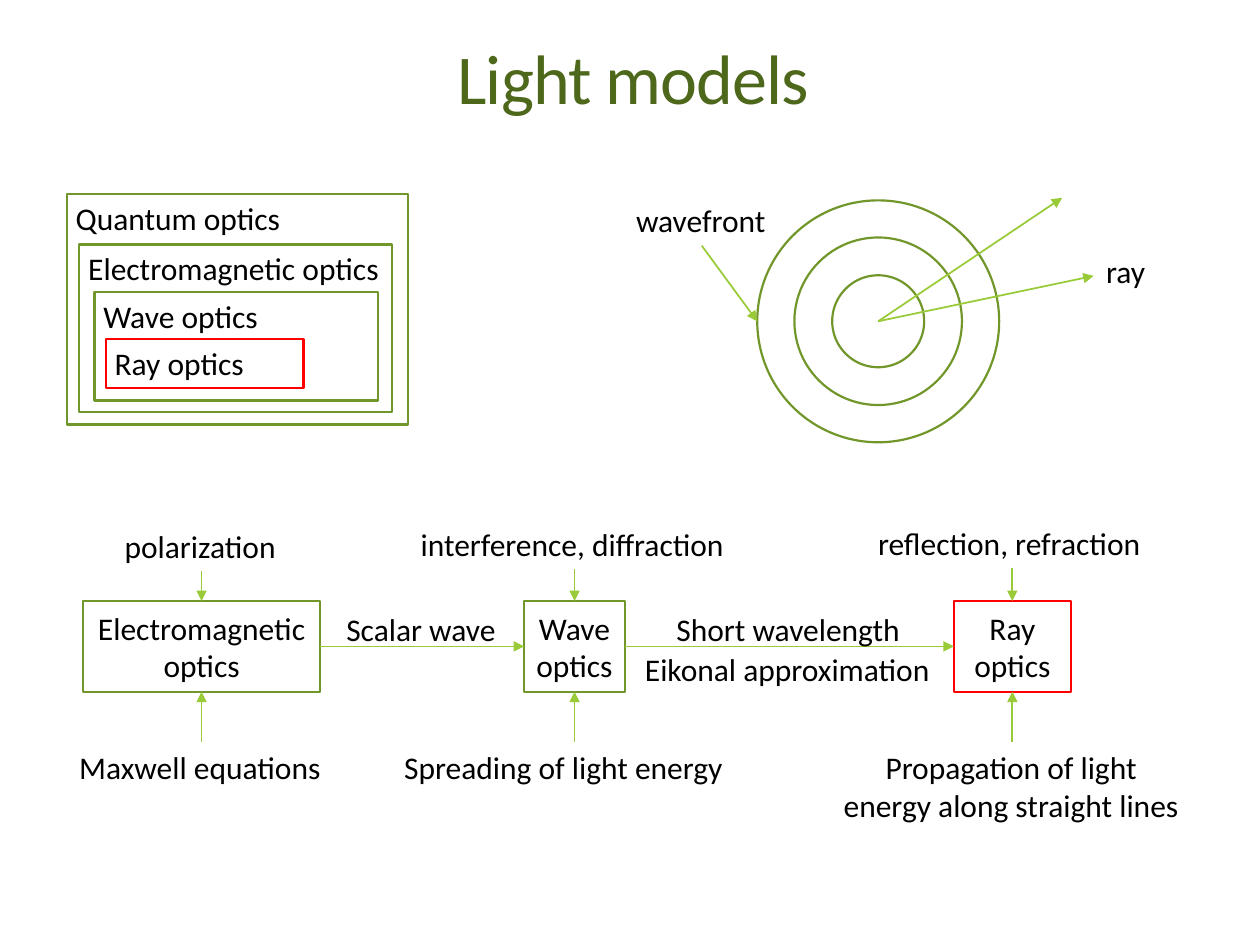
from lxml import etree
from pptx import Presentation
from pptx.dml.color import RGBColor
from pptx.enum import shapes, text
from pptx.oxml import ns
from pptx.util import Inches, Pt

DARK = RGBColor(0x4D, 0x67, 0x1B)
GREEN = RGBColor(0x71, 0x96, 0x29)
LIME = RGBColor(0x99, 0xCB, 0x38)
RED = RGBColor(0xFF, 0, 0)
BLACK = RGBColor(0, 0, 0)
KIND = shapes.MSO_SHAPE
LEFT, MID = text.PP_ALIGN.LEFT, text.PP_ALIGN.CENTER
TOP, CORE, LOW = (text.MSO_ANCHOR.TOP, text.MSO_ANCHOR.MIDDLE,
                  text.MSO_ANCHOR.BOTTOM)


def assign(item, values):
    for key, value in values.items():
        setattr(item, key, value)


def write(shape, words, align=LEFT, anchor=TOP, wrap=True, pad=(0.1, 0.05),
          size=18, color=BLACK):
    frame = shape.text_frame
    side, edge = map(Inches, pad)
    assign(frame, dict(word_wrap=wrap, vertical_anchor=anchor,
                       margin_left=side, margin_right=side,
                       margin_top=edge, margin_bottom=edge))
    line = frame.paragraphs[0]
    line.alignment = align
    run = line.add_run()
    run.text = words
    assign(run.font, dict(name="Calibri", size=Pt(size)))
    run.font.color.rgb = color
    return line


def label(slide, words, x, y, w, h=0.4, **style):
    box = slide.shapes.add_textbox(*map(Inches, (x, y, w, h)))
    return write(box, words, **style)


def outline(slide, kind, x, y, w, h, color=GREEN):
    shape = slide.shapes.add_shape(kind, *map(Inches, (x, y, w, h)))
    shape.shadow.inherit = False
    shape.fill.background()
    shape.line.color.rgb = color
    shape.line.width = Pt(1.25)
    return shape


def arrow(slide, *ends):
    link = slide.shapes.add_connector(shapes.MSO_CONNECTOR.STRAIGHT,
                                      *map(Inches, ends))
    link.line.color.rgb = LIME
    link.line.width = Pt(1)
    tip = etree.SubElement(link.line._get_or_add_ln(), ns.qn("a:tailEnd"))
    tip.set("type", "triangle")
    etree.SubElement(link._element.spPr, ns.qn("a:effectLst"))


def title(slide, x, y, w, h):
    line = label(slide, "Light models", x, y, w, h, align=MID, anchor=LOW,
                 size=40, color=DARK)
    line.line_spacing = 0.85
    line.runs[0]._r.get_or_add_rPr().set("spc", "-50")


def nest(slide, x, y, w, h):
    layers = [
        ("Quantum optics", 0, 0, w, h, GREEN),
        ("Electromagnetic optics", 0.1, 0.4, 2.48, 1.33, GREEN),
        ("Wave optics", 0.22, 0.78, 2.25, 0.86, GREEN),
        ("Ray optics", 0.31, 1.15, 1.57, 0.39, RED),
    ]
    for words, dx, dy, wide, high, color in layers:
        box = outline(slide, KIND.RECTANGLE, x + dx, y + dy, wide, high, color)
        write(box, words, pad=(0.07, 0.04))


def waves(slide, x, y, w, h):
    cx, cy = x + 2.02, y + 1
    for size in (0.73, 1.33, 1.92):
        outline(slide, KIND.OVAL, cx - size / 2, cy - size / 2, size, size)
    arrow(slide, cx, cy, x + 3.48, y + 0.02)
    arrow(slide, cx, cy, x + 3.73, y + 0.64)
    arrow(slide, x + 0.62, y + 0.4, cx - 0.96, cy)
    label(slide, "wavefront", x, y, 1.24, wrap=False)
    label(slide, "ray", x + w - 0.51, y + 0.4, 0.51, wrap=False)


def flow(slide, x, y, w, h):
    top, high = y + 0.66, 0.72
    base, foot = top + high, y + 1.78
    axis = top + high / 2
    stages = [
        ("Electromagnetic optics", 0.13, 1.88, GREEN,
         ("polarization", 0.36, 0.02, 1.42),
         ("Maxwell equations", 0, 2.14, 0.4, False, LEFT)),
        ("Wave optics", 3.63, 0.8, GREEN,
         ("interference, diffraction", 2.71, 0.01, 2.65),
         ("Spreading of light energy", 2.58, 2.9, 0.4, True, LEFT)),
        ("Ray optics", 7.04, 0.93, RED,
         ("reflection, refraction", 6.34, 0, 2.31),
         ("Propagation of light energy along straight lines",
          6.05, 2.89, 0.71, True, MID)),
    ]
    for words, dx, wide, color, effect, cause in stages:
        box = outline(slide, KIND.RECTANGLE, x + dx, top, wide, high, color)
        write(box, words, MID, CORE, pad=(0.07, 0.04))
        name, ex, ey, ew = effect
        label(slide, name, x + ex, y + ey, ew, wrap=False)
        name, bx, bw, bh, wrap, align = cause
        label(slide, name, x + bx, foot, bw, bh, wrap=wrap, align=align)
        mid = x + dx + wide / 2
        arrow(slide, mid, y + ey + 0.4, mid, top)
        arrow(slide, mid, foot, mid, base)
    for one, two in zip(stages, stages[1:]):
        arrow(slide, x + one[1] + one[2], axis, x + two[1], axis)
    for words, dx, dy, wide in [("Scalar wave", 2.12, 0.68, 1.4),
                                ("Short wavelength", 4.74, 0.68, 2),
                                ("Eikonal approximation", 4.49, 1, 2.49)]:
        label(slide, words, x + dx, y + dy, wide, wrap=False)


def main():
    deck = Presentation()
    assign(deck, dict(slide_width=Inches(10), slide_height=Inches(7.5)))
    slide = deck.slides.add_slide(deck.slide_layouts[6])
    title(slide, 0.9, 0.31, 8.25, 0.68)
    nest(slide, 0.53, 1.54, 2.71, 1.83)
    waves(slide, 4.95, 1.55, 4.24, 1.96)
    flow(slide, 0.53, 4.11, 8.94, 2.49)
    deck.save("out.pptx")


if __name__ == "__main__":
    main()
